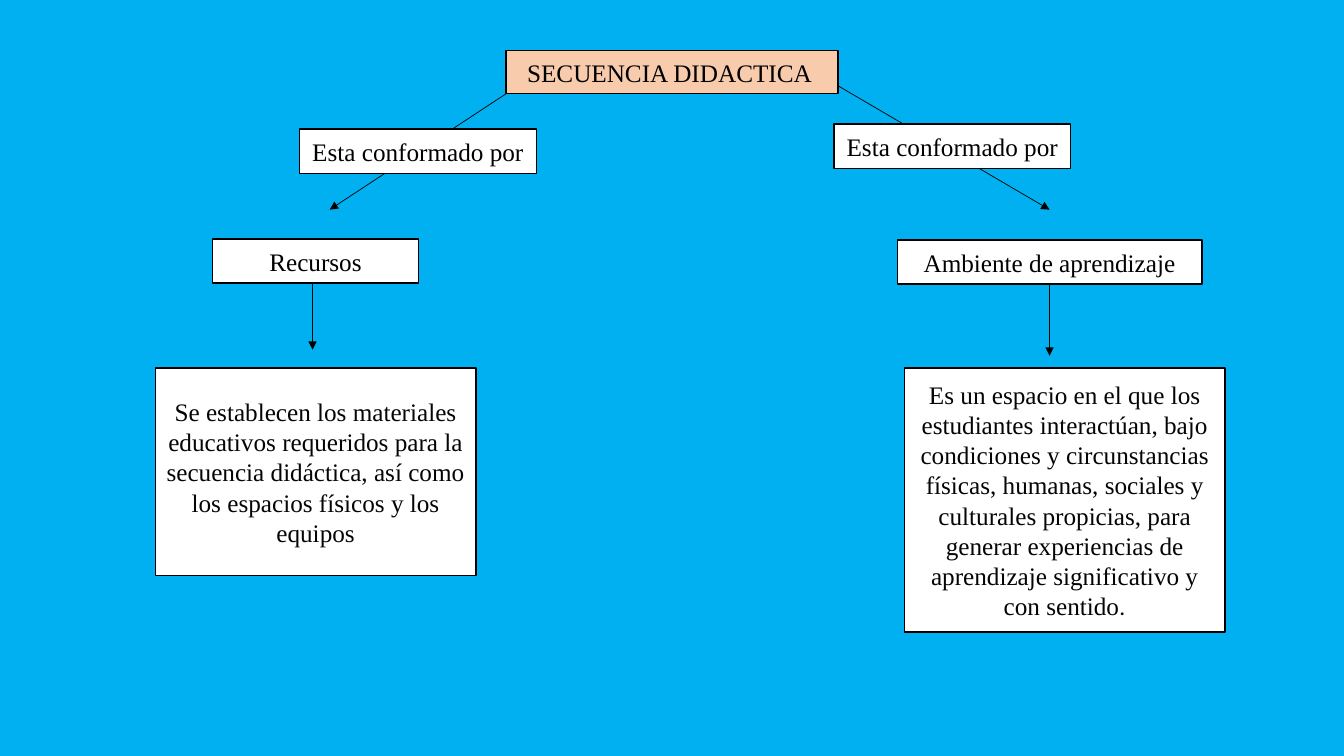
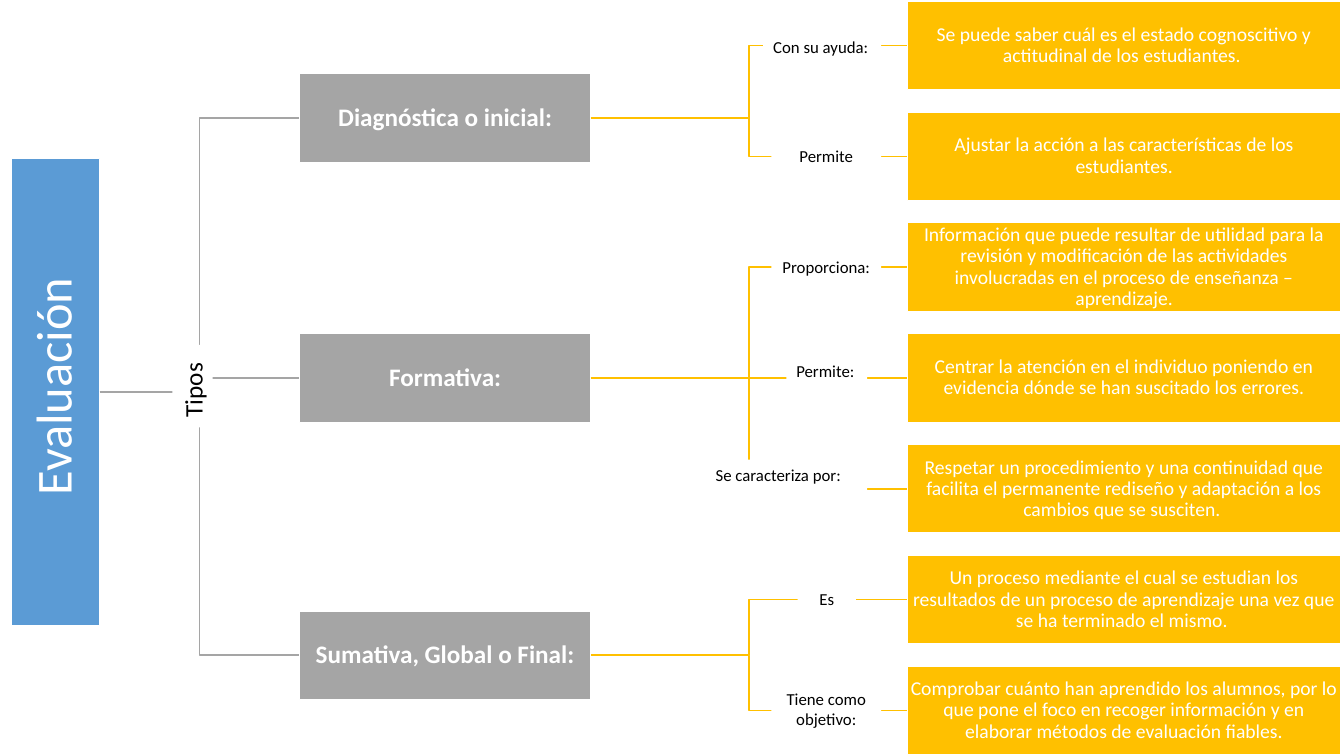
"""Build two concept maps: the teaching sequence and the types of evaluation."""
from dataclasses import dataclass

from lxml import etree
from pptx import Presentation
from pptx import util as u
from pptx.dml.color import RGBColor
from pptx.enum import shapes, text
from pptx.oxml.ns import qn


@dataclass(frozen=True)
class Theme:
    sky: str = "00B0F0"
    peach: str = "F8CBAD"
    white: str = "FFFFFF"
    black: str = "000000"
    ink: str = "050505"
    blue: str = "5B9BD5"
    gray: str = "A5A5A5"
    gold: str = "FFC000"
    serif: str = "Times New Roman"
    sans: str = "Calibri"
    accent: str = "Roboto"
    root: int = 36
    heading: int = 18
    body: int = 14
    label: int = 12


theme = Theme()


def add_box(slide, at, runs, fill, line=None, inset=None, spacing=None, rotation=0,
            anchor=text.MSO_ANCHOR.MIDDLE, align=text.PP_ALIGN.CENTER,
            color=theme.black, **font):
    box = slide.shapes.add_shape(shapes.MSO_SHAPE.RECTANGLE, *map(u.Inches, at))
    box.shadow.inherit = False
    box.rotation = rotation
    box.fill.solid()
    box.fill.fore_color.rgb = RGBColor.from_string(fill)
    if line:
        box.line.color.rgb = RGBColor.from_string(line)
        box.line.width = u.Pt(1)
    else:
        box.line.fill.background()
    frame = box.text_frame
    layout = {"word_wrap": True, "vertical_anchor": anchor}
    if inset is not None:
        sides = ("left", "top", "right", "bottom")
        layout |= {f"margin_{side}": u.Inches(inset) for side in sides}
    for key, value in layout.items():
        setattr(frame, key, value)
    paragraph = frame.paragraphs[0]
    paragraph.alignment = align
    paragraph.line_spacing = spacing
    for words, own_font in runs:
        run = paragraph.add_run()
        run.text = words
        run.font.color.rgb = RGBColor.from_string(color)
        for key, value in (font | own_font).items():
            setattr(run.font, key, value)


def add_link(slide, start, end, color, width, kind=shapes.MSO_CONNECTOR.STRAIGHT, arrow=False):
    link = slide.shapes.add_connector(kind, *map(u.Inches, (*start, *end)))
    link.line.color.rgb = RGBColor.from_string(color)
    link.line.width = u.Pt(width)
    if arrow:
        etree.SubElement(link.line._get_or_add_ln(), qn("a:tailEnd"), type="triangle")
    etree.SubElement(link._element.spPr, qn("a:effectLst"))


deck = Presentation()
deck.slide_width, deck.slide_height = u.Inches(13.33), u.Inches(7.5)
sequence, evaluation = (deck.slides.add_slide(deck.slide_layouts[6]) for _ in range(2))
for slide, color in ((sequence, theme.sky), (evaluation, theme.white)):
    slide.background.fill.solid()
    slide.background.fill.fore_color.rgb = RGBColor.from_string(color)

arrows = [
    ((5.02, 0.93), (3.27, 2.08)),
    ((3.1, 2.82), (3.1, 3.47)),
    ((8.31, 0.85), (10.41, 2.08)),
    ((10.41, 2.83), (10.41, 3.53)),
]
for start, end in arrows:
    add_link(sequence, start, end, theme.black, 0.5, arrow=True)

concepts = [
    ((5.02, 0.5, 3.29, 0.43), "SECUENCIA DIDACTICA ", theme.peach),
    ((2.97, 1.28, 2.35, 0.44), "Esta conformado por", theme.white),
    ((8.27, 1.23, 2.35, 0.44), "Esta conformado por", theme.white),
    ((2.11, 2.37, 2.04, 0.44), "Recursos", theme.white),
    ((8.9, 2.38, 3.02, 0.44), "Ambiente de aprendizaje", theme.white),
]
serif = {"line": theme.black, "name": theme.serif, "size": u.Pt(theme.heading)}
for at, words, fill in concepts:
    add_box(sequence, at, [(words, {})], fill, **serif)

definitions = [
    ((1.54, 3.65, 3.18, 2.06), [
        ("Se establecen los materiales educativos requeridos para la secuencia didáctica, "
         "así como los espacios físicos y los equipos", {})]),
    ((8.97, 3.65, 3.18, 2.62), [
        ("Es un espacio en el que los estudiantes interactúan, bajo condiciones y "
         "circunstancias físicas, humanas, sociales y culturales propicias, para generar "
         "experiencias de aprendizaje significativo y con sentido", {}),
        (".", {"name": theme.accent})]),
]
for at, runs in definitions:
    add_box(sequence, at, runs, theme.white, color=theme.ink, **serif)

kinds = [
    ("Diagnóstica o inicial:", 0.73, [
        "Se puede saber cuál es el estado cognoscitivo y actitudinal de los estudiantes. ",
        "Ajustar la acción a las características de los estudiantes."]),
    ("Formativa:", 3.31, [
        "Información que puede resultar de utilidad para la revisión y modificación de las "
        "actividades involucradas en el proceso de enseñanza – aprendizaje.",
        "Centrar la atención en el individuo poniendo en evidencia dónde se han suscitado "
        "los errores.",
        "Respetar un procedimiento y una continuidad que facilita el permanente rediseño y "
        "adaptación a los cambios que se susciten. "]),
    ("Sumativa, Global o Final:", 6.06, [
        "Un proceso mediante el cual se estudian los resultados de un proceso de "
        "aprendizaje una vez que se ha terminado el mismo. ",
        "Comprobar cuánto han aprendido los alumnos, por lo que pone el foco en recoger "
        "información y en elaborar métodos de evaluación fiables."]),
]
root_right, root_middle = 0.99, 3.89
kind_left, kind_width = 2.97, 2.89
detail_left, detail_width, detail_pitch = 9, 4.3, 1.1
node_height = 0.88
node = {"line": theme.white, "spacing": 0.9, "color": theme.white, "name": theme.sans}
elbow = shapes.MSO_CONNECTOR.ELBOW

add_box(evaluation, (-1.77, 3.45, 4.64, node_height), [(" Evaluación", {})], theme.blue,
        inset=0.03, rotation=270, size=u.Pt(theme.root), **node)
detail_top = 0.01
for kind, kind_top, details in kinds:
    kind_middle = kind_top + node_height / 2
    add_link(evaluation, (root_right, root_middle), (kind_left, kind_middle),
             theme.gray, 1, elbow)
    add_box(evaluation, (kind_left, kind_top, kind_width, node_height), [(kind, {})],
            theme.gray, inset=0.01, size=u.Pt(theme.heading), bold=True, **node)
    for detail in details:
        detail_middle = detail_top + node_height / 2
        add_link(evaluation, (kind_left + kind_width, kind_middle),
                 (detail_left, detail_middle), theme.gold, 1, elbow)
        add_box(evaluation, (detail_left, detail_top, detail_width, node_height),
                [(detail, {})], theme.gold, inset=0.01, size=u.Pt(theme.body), **node)
        detail_top += detail_pitch

left, center = text.PP_ALIGN.LEFT, text.PP_ALIGN.CENTER
link_words = [
    ((7, 4.56, 1.6, 0.61), "Se caracteriza por:", left, theme.label, 0),
    ((7.8, 3.53, 0.8, 0.61), "Permite:", left, theme.label, 0),
    ((7.65, 2.5, 1.09, 0.61), "Proporciona:", center, theme.label, 0),
    ((7.57, 0.32, 1.17, 0.3), "Con su ayuda:", left, theme.label, 0),
    ((7.65, 1.4, 1.09, 0.61), "Permite", center, theme.label, 0),
    ((7.91, 5.79, 0.58, 0.3), "Es", center, theme.label, 0),
    ((7.65, 6.78, 1.09, 0.5), "Tiene como objetivo:", center, theme.label, 0),
    ((1.5, 3.63, 0.82, 0.4), "Tipos", left, theme.heading, 270),
]
for at, words, align, size, rotation in link_words:
    add_box(evaluation, at, [(words, {})], theme.white, rotation=rotation, align=align,
            anchor=text.MSO_ANCHOR.TOP, name=theme.sans, size=u.Pt(size))

deck.save("out.pptx")
